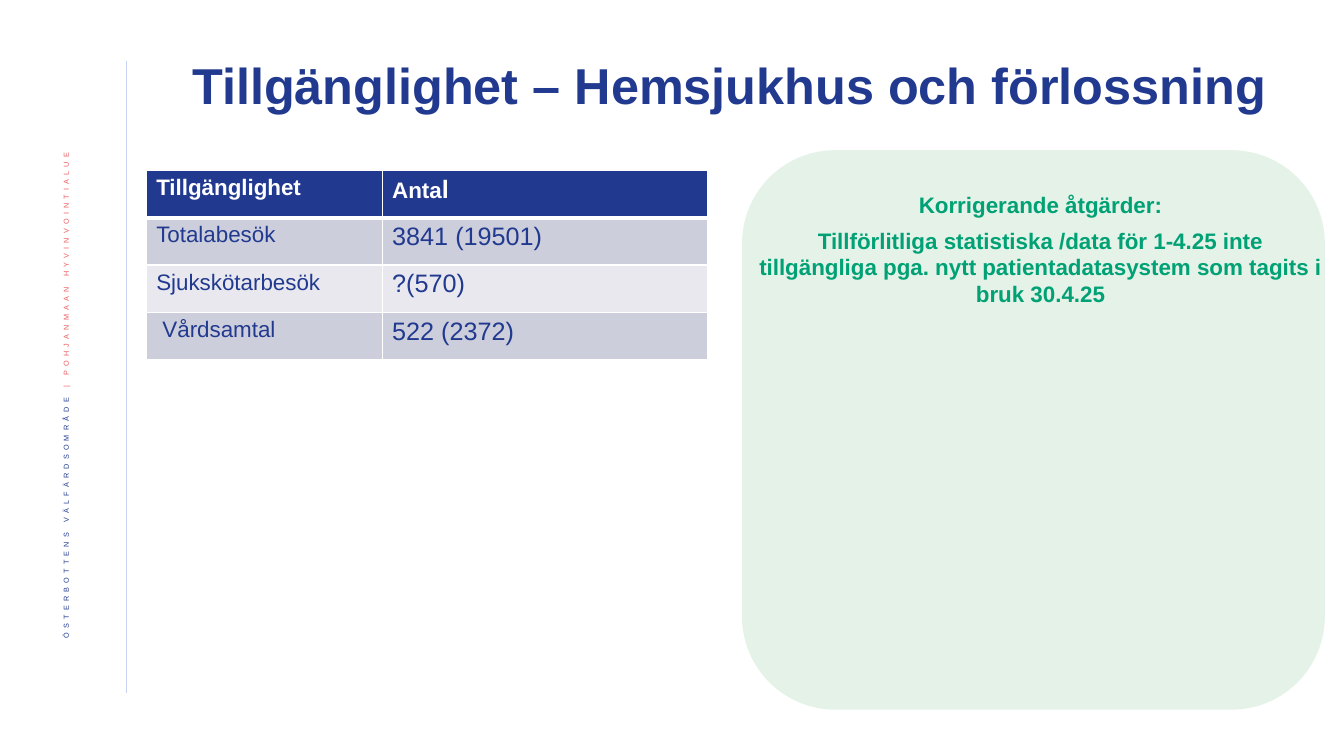
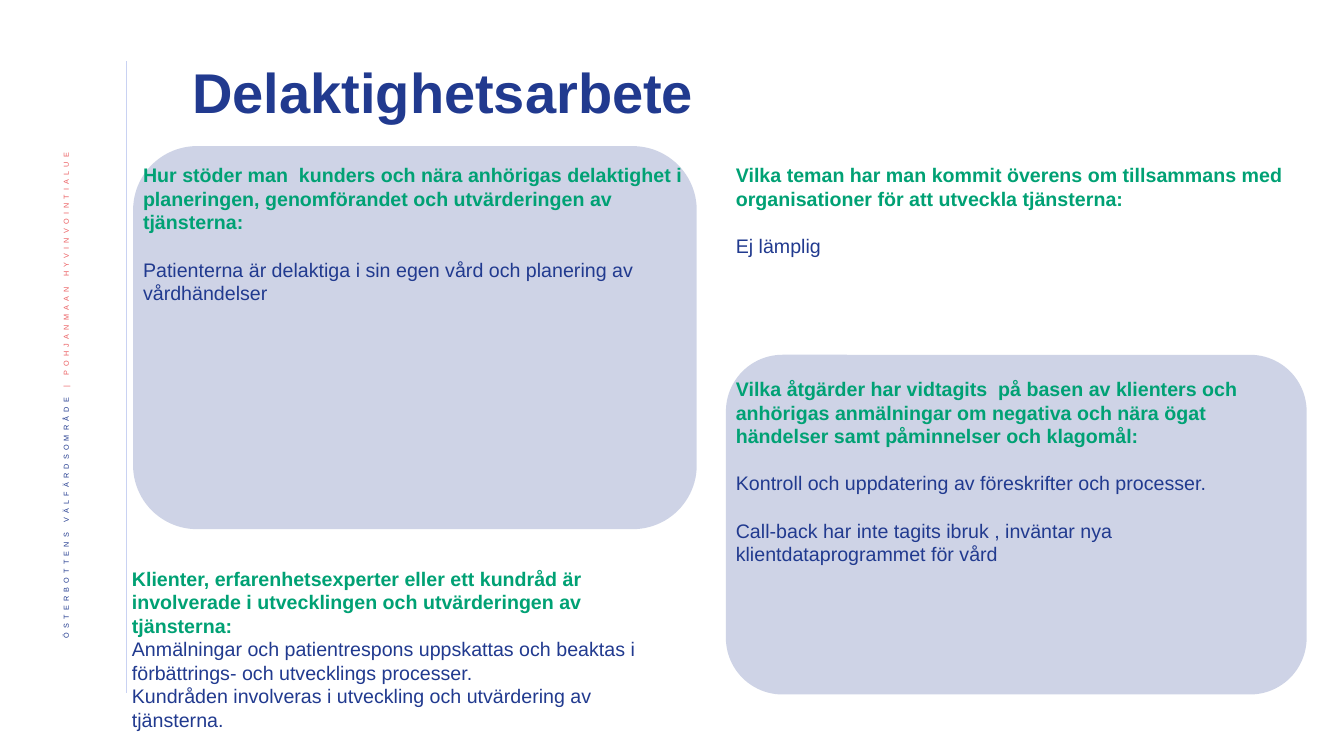
from dataclasses import dataclass

from lxml import etree
from pptx import Presentation
from pptx.dml.color import RGBColor
from pptx.enum.shapes import MSO_CONNECTOR, MSO_SHAPE
from pptx.enum.text import MSO_ANCHOR, PP_ALIGN
from pptx.oxml.ns import qn
from pptx.util import Inches, Pt

STRAIGHT = MSO_CONNECTOR.STRAIGHT
ROUNDED = MSO_SHAPE.ROUNDED_RECTANGLE
MIDDLE = MSO_ANCHOR.MIDDLE
CENTER, LEFT, RIGHT = PP_ALIGN.CENTER, PP_ALIGN.LEFT, PP_ALIGN.RIGHT


@dataclass(frozen=True)
class Theme:
    font: str = "Arial"
    navy: str = "213A8F"
    green: str = "00A174"
    mint: str = "85C598"
    coral: str = "EB5C5F"
    rule: str = "C9D2F2"
    white: str = "FFFFFF"
    bands: tuple = ("CDCEDB", "E8E8EE")
    panel_opacity: int = 22
    title: int = 36
    title_large: int = 40
    value: int = 18
    label: int = 16
    body: int = 14
    side: int = 9
    blank_line: int = 17


THEME = Theme()


def rgb(color):
    return RGBColor.from_string(color)


def style(size, color, bold=False):
    return {"name": THEME.font, "size": Pt(size), "bold": bold, "color": color}


QUESTION = style(THEME.body, THEME.green, True)
ANSWER = style(THEME.body, THEME.navy)
ACTION = style(THEME.label, THEME.green, True)
HEADER = style(THEME.label, THEME.white, True)
HEADER_LARGE = style(THEME.value, THEME.white, True)
ROW_LABEL = style(THEME.label, THEME.navy)
ROW_VALUE = style(THEME.value, THEME.navy)


def add_run(paragraph, text, font_style):
    run = paragraph.add_run()
    run.text = text
    for name, value in font_style.items():
        if name == "color":
            run.font.color.rgb = rgb(value)
        else:
            setattr(run.font, name, value)
    return run


def set_borders(cell, widths):
    """Draw white borders; widths are points for left, right, top, bottom."""
    properties = cell._tc.get_or_add_tcPr()
    for side, width in zip("LRTB", widths):
        line = etree.SubElement(properties, qn(f"a:ln{side}"), w=str(Pt(width)))
        fill = etree.SubElement(line, qn("a:solidFill"))
        etree.SubElement(fill, qn("a:srgbClr"), val=THEME.white)


class Deck:
    def __init__(self):
        self.presentation = Presentation()
        self.presentation.slide_width = Inches(13.33)
        self.presentation.slide_height = Inches(7.5)
        self.slide = None

    def new_slide(self, title, size, width, height):
        layout = self.presentation.slide_layouts[6]
        self.slide = self.presentation.slides.add_slide(layout)
        self.side_rule()
        self.side_label()
        frame = self.text((1.81, 0.45, width, height),
                          [(title, style(size, THEME.navy, True))],
                          line_spacing=0.9)
        frame.vertical_anchor = MIDDLE

    def side_rule(self):
        x = Inches(1.25)
        rule = self.slide.shapes.add_connector(
            STRAIGHT, x, Inches(0.61), x, Inches(6.88))
        rule.line.color.rgb = rgb(THEME.rule)
        rule.line.width = Pt(0.5)
        etree.SubElement(rule._element.spPr, qn("a:effectLst"))

    def side_label(self):
        frame = self.text((0.42, 1.42, 0.52, 5.73), [], align=RIGHT)
        frame.vertical_anchor = MIDDLE
        frame._txBody.bodyPr.set("vert", "vert270")
        paragraph = frame.paragraphs[0]
        paragraph.alignment = RIGHT
        paragraph.line_spacing = 0.9
        for text, color in (("ÖSTERBOTTENS VÄLFÄRDSOMRÅDE ", THEME.navy),
                            ("| POHJANMAAN HYVINVOINTIALUE", THEME.coral)):
            run = add_run(paragraph, text, style(THEME.side, color))
            properties = run._r.get_or_add_rPr()
            for name, value in {"baseline": "30000", "spc": "300"}.items():
                properties.set(name, value)

    def text(self, box, paragraphs, align=LEFT, line_spacing=1.0, after=0):
        """Add paragraphs of (text, style) or (text, style, space before)."""
        frame = self.slide.shapes.add_textbox(*map(Inches, box)).text_frame
        frame.word_wrap = True
        for index, (words, font_style, *before) in enumerate(paragraphs):
            paragraph = frame.add_paragraph() if index else frame.paragraphs[0]
            layout = {"alignment": align, "line_spacing": line_spacing,
                      "space_after": Pt(after)}
            if before:
                layout["space_before"] = Pt(before[0])
            for name, value in layout.items():
                setattr(paragraph, name, value)
            add_run(paragraph, words, font_style)
        return frame

    def panel(self, box, color):
        panel = self.slide.shapes.add_shape(ROUNDED, *map(Inches, box))
        panel.shadow.inherit = False
        panel.line.fill.background()
        panel.fill.solid()
        panel.fill.fore_color.rgb = rgb(color)
        tint = panel._element.spPr.find(qn("a:solidFill"))[0]
        etree.SubElement(tint, qn("a:alpha"), val=str(THEME.panel_opacity * 1000))

    def table(self, left, top, widths, row_height, rows):
        """Each cell is a list of (text, style) runs; the first row is the header."""
        table = self.slide.shapes.add_table(
            len(rows), len(widths), Inches(left), Inches(top),
            Inches(sum(widths)), Inches(row_height * len(rows))).table
        table.horz_banding = False
        for column, width in zip(table.columns, widths):
            column.width = Inches(width)
        for index, cells in enumerate(rows):
            table.rows[index].height = Inches(row_height)
            fill = THEME.bands[(index - 1) % 2] if index else THEME.navy
            top_width = 3 if index == 1 else 1
            bottom_width = 1 if index else 3
            for cell, runs in zip(table.rows[index].cells, cells):
                set_borders(cell, (1, 1, top_width, bottom_width))
                cell.fill.solid()
                cell.fill.fore_color.rgb = rgb(fill)
                for words, font_style in runs:
                    add_run(cell.text_frame.paragraphs[0], words, font_style)


def availability_slide(deck):
    deck.new_slide("Tillgänglighet – Hemsjukhus och förlossning",
                   THEME.title, 10.98, 0.85)
    deck.panel((7.36, 1.49, 5.78, 5.55), THEME.mint)
    deck.text((7.43, 1.85, 5.78, 1.62), [
        ("Korrigerande åtgärder:", ACTION),
        ("Tillförlitliga statistiska /data för 1-4.25 inte tillgängliga pga. "
         "nytt patientadatasystem som tagits i bruk 30.4.25", ACTION),
    ], align=CENTER, after=6)
    visits = (("Totalabesök", "3841 (19501)"),
              ("Sjukskötarbesök", "?(570)"),
              (" Vårdsamtal", "522 (2372)"))
    header = [[("Tillgänglighet", HEADER)],
              [("Anta", HEADER), ("l", HEADER_LARGE)]]
    deck.table(1.45, 1.69, (2.34, 3.23), 0.47, [header] + [
        [[(label, ROW_LABEL)], [(count, ROW_VALUE)]] for label, count in visits])


def participation_slide(deck):
    gap = THEME.blank_line
    deck.new_slide("Delaktighetsarbete", THEME.title_large, 9.98, 0.99)
    deck.panel((1.32, 1.45, 5.59, 3.8), THEME.navy)
    deck.panel((7.2, 3.52, 5.76, 3.37), THEME.navy)
    deck.text((1.32, 1.57, 5.59, 1.75), [
        ("Hur stöder man  kunders och nära anhörigas delaktighet i planeringen, "
         "genomförandet och utvärderingen av tjänsterna:", QUESTION),
        ("Patienterna är delaktiga i sin egen vård och planering av", ANSWER, gap),
        ("vårdhändelser", ANSWER),
    ])
    deck.text((7.2, 1.57, 5.76, 1.04), [
        ("Vilka teman har man kommit överens om tillsammans med organisationer "
         "för att utveckla tjänsterna:", QUESTION),
        ("Ej lämplig", ANSWER, gap),
    ])
    deck.text((1.21, 5.57, 5.59, 1.99), [
        ("Klienter, erfarenhetsexperter eller ett kundråd är involverade i "
         "utvecklingen och utvärderingen av tjänsterna:", QUESTION),
        ("Anmälningar och patientrespons uppskattas och beaktas i förbättrings- "
         "och utvecklings processer.", ANSWER),
        ("Kundråden involveras i utveckling och utvärdering av tjänsterna.", ANSWER),
    ])
    deck.text((7.2, 3.69, 5.76, 1.99), [
        ("Vilka åtgärder har vidtagits  på basen av klienters och anhörigas "
         "anmälningar om negativa och nära ögat händelser samt påminnelser och "
         "klagomål:", QUESTION),
        ("Kontroll och uppdatering av föreskrifter och processer.", ANSWER, gap),
        ("Call-back har inte tagits ibruk , inväntar nya", ANSWER, gap),
        ("klientdataprogrammet för vård", ANSWER),
    ])


def main():
    deck = Deck()
    availability_slide(deck)
    participation_slide(deck)
    deck.presentation.save("out.pptx")


if __name__ == "__main__":
    main()
